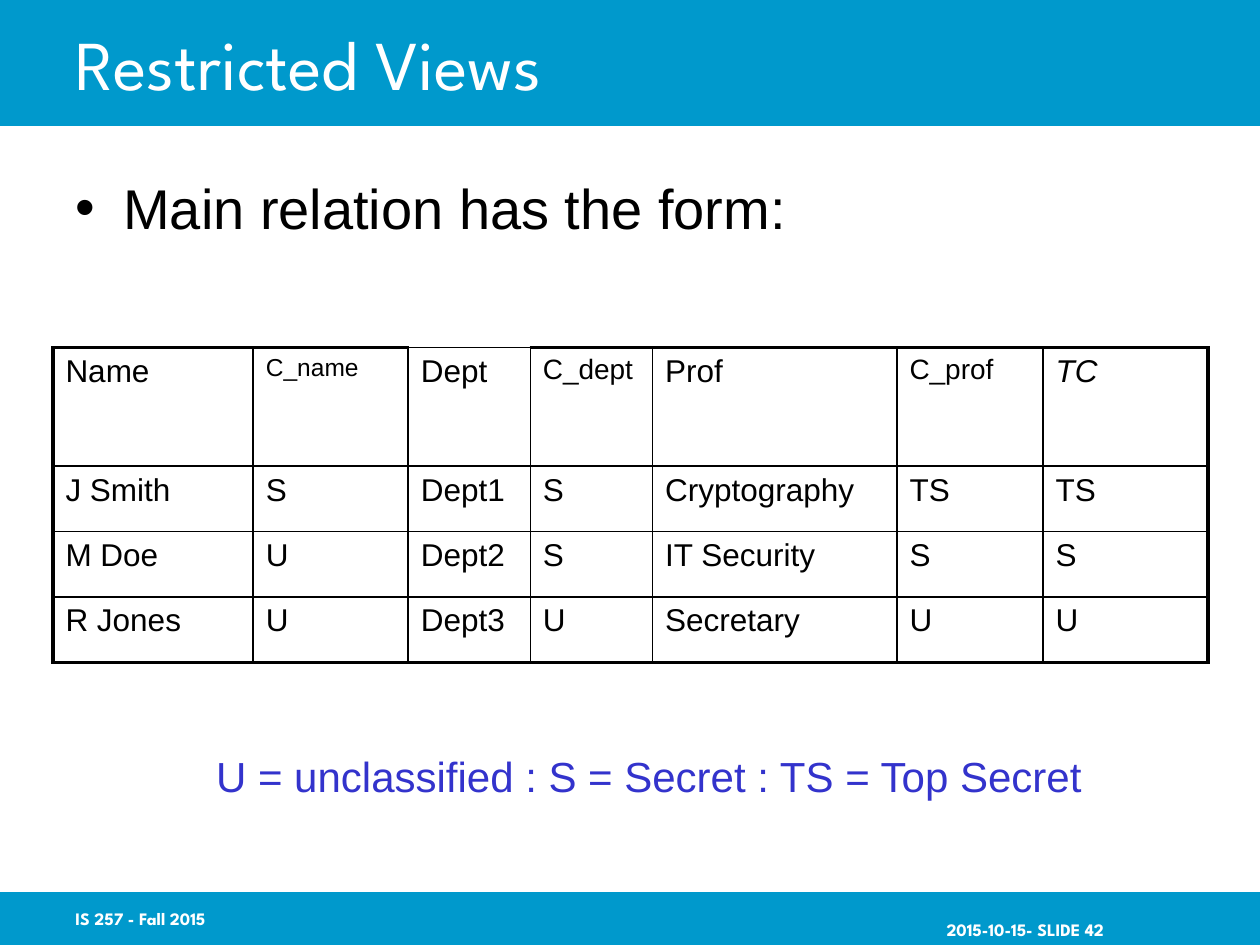
from lxml import etree
from pptx import Presentation
from pptx.dml.color import RGBColor
from pptx.enum.shapes import MSO_SHAPE
from pptx.enum.text import MSO_ANCHOR as Anchor, PP_ALIGN as Align
from pptx.oxml import parse_xml
from pptx.oxml.ns import nsdecls, qn
from pptx.util import Inches, Pt

COLORS = {"band": "0099CC", "light": "FFFFFF", "text": "000000", "legend": "3333CC"}
HEADING_FONT = "League Spartan"
BODY_FONT = "Arial"

BANDS = [(0, 0, 10, 1), (0, 7.08, 10, 0.42)]
TITLE = "Restricted Views"
BULLET = "Main relation has the form:"
LEGEND = "U = unclassified : S = Secret : TS = Top Secret"
COURSE = "IS 257 - Fall 2015"
SLIDE_LABEL = "2015-10-15- SLIDE 42"

ROWS = [
    ["Name", "C_name", "Dept", "C_dept", "Prof", "C_prof", "TC"],
    ["J Smith", "S", "Dept1", "S", "Cryptography", "TS", "TS"],
    ["M Doe", "U", "Dept2", "S", "IT Security", "S", "S"],
    ["R Jones", "U", "Dept3", "U", "Secretary", "U", "U"],
]
COLUMN_WIDTHS = [1.59, 1.23, 0.97, 0.97, 1.94, 1.16, 1.31]
ROW_HEIGHTS = [0.94, 0.52, 0.52, 0.52]
HEADER_SIZES = {"C_name": 14, "C_dept": 16, "C_prof": 16}
CELL_SIZE = 18
OUTER_LINE, INNER_LINE = 2.25, 1


def add_run(paragraph, text, size, color, font=BODY_FONT, bold=False, italic=False):
    run = paragraph.add_run()
    run.text = text
    run.font.name = font
    run.font.size = Pt(size)
    run.font.bold = bold
    run.font.italic = italic
    run.font.color.rgb = RGBColor.from_string(COLORS[color])


def add_text_box(slide, box, text, size, color, font=BODY_FONT, bold=False, wrap=True,
                 align=Align.LEFT, anchor=Anchor.TOP, insets=(0.1, 0.05, 0.1, 0.05)):
    frame = slide.shapes.add_textbox(*map(Inches, box)).text_frame
    frame.word_wrap = wrap
    frame.vertical_anchor = anchor
    (frame.margin_left, frame.margin_top,
     frame.margin_right, frame.margin_bottom) = map(Inches, insets)
    paragraph = frame.paragraphs[0]
    paragraph.alignment = align
    add_run(paragraph, text, size, color, font, bold)
    return paragraph


def add_bullet(paragraph, indent):
    properties = paragraph._p.get_or_add_pPr()
    properties.set("marL", str(Inches(indent)))
    properties.set("indent", str(-Inches(indent)))
    etree.SubElement(properties, qn("a:buFont")).set("typeface", BODY_FONT)
    etree.SubElement(properties, qn("a:buChar")).set("char", "•")


def set_borders(cell, widths):
    properties = cell._tc.get_or_add_tcPr()
    for position, (side, width) in enumerate(widths.items()):
        properties.insert(position, parse_xml(
            f'<a:ln{side} {nsdecls("a")} w="{Pt(width)}"><a:solidFill>'
            f'<a:srgbClr val="{COLORS["text"]}"/></a:solidFill></a:ln{side}>'))


def add_relation_table(slide):
    last_row, last_column = len(ROWS) - 1, len(COLUMN_WIDTHS) - 1
    table = slide.shapes.add_table(
        len(ROWS), len(COLUMN_WIDTHS), Inches(0.42), Inches(2.76),
        Inches(sum(COLUMN_WIDTHS)), Inches(sum(ROW_HEIGHTS))).table
    table.first_row = table.horz_banding = False
    for column, width in zip(table.columns, COLUMN_WIDTHS):
        column.width = Inches(width)
    for row, height in zip(table.rows, ROW_HEIGHTS):
        row.height = Inches(height)
    for row_index, values in enumerate(ROWS):
        for column_index, value in enumerate(values):
            cell = table.cell(row_index, column_index)
            cell.fill.background()
            add_run(cell.text_frame.paragraphs[0], value,
                    HEADER_SIZES.get(value, CELL_SIZE), "text", italic=value == "TC")
            outer = {
                "L": column_index == 0,
                "R": column_index == last_column,
                "T": row_index == 0 and value != "Dept",
                "B": row_index == last_row,
            }
            set_borders(cell, {side: OUTER_LINE if is_outer else INNER_LINE
                               for side, is_outer in outer.items()})


def main():
    presentation = Presentation()
    presentation.slide_width, presentation.slide_height = Inches(10), Inches(7.5)
    slide = presentation.slides.add_slide(presentation.slide_layouts[6])

    for box in BANDS:
        band = slide.shapes.add_shape(MSO_SHAPE.RECTANGLE, *map(Inches, box))
        band.shadow.inherit = False
        band.fill.solid()
        band.fill.fore_color.rgb = RGBColor.from_string(COLORS["band"])
        band.line.fill.background()

    footer = {"size": 10, "color": "light", "font": HEADING_FONT, "bold": True,
              "anchor": Anchor.MIDDLE}
    add_text_box(slide, (7.42, 7.08, 2.08, 0.42), SLIDE_LABEL, align=Align.RIGHT,
                 insets=(0, 0.22, 0.74, 0.05), **footer)
    add_text_box(slide, (0.5, 7.08, 2.08, 0.42), COURSE,
                 insets=(0.1, 0.05, 0, 0.05), **footer)
    add_text_box(slide, (0.5, 0, 8.5, 1), TITLE, 40, "light", HEADING_FONT,
                 anchor=Anchor.MIDDLE)
    body = add_text_box(slide, (0.5, 1.33, 9, 5.42), BULLET, 32, "text",
                        insets=(0.1, 0.05, 0.1, 0))
    add_bullet(body, 0.38)
    add_relation_table(slide)
    add_text_box(slide, (1.59, 5.91, 7.12, 0.5), LEGEND, 24, "legend",
                 wrap=False, align=Align.CENTER)
    presentation.save("out.pptx")


if __name__ == "__main__":
    main()
